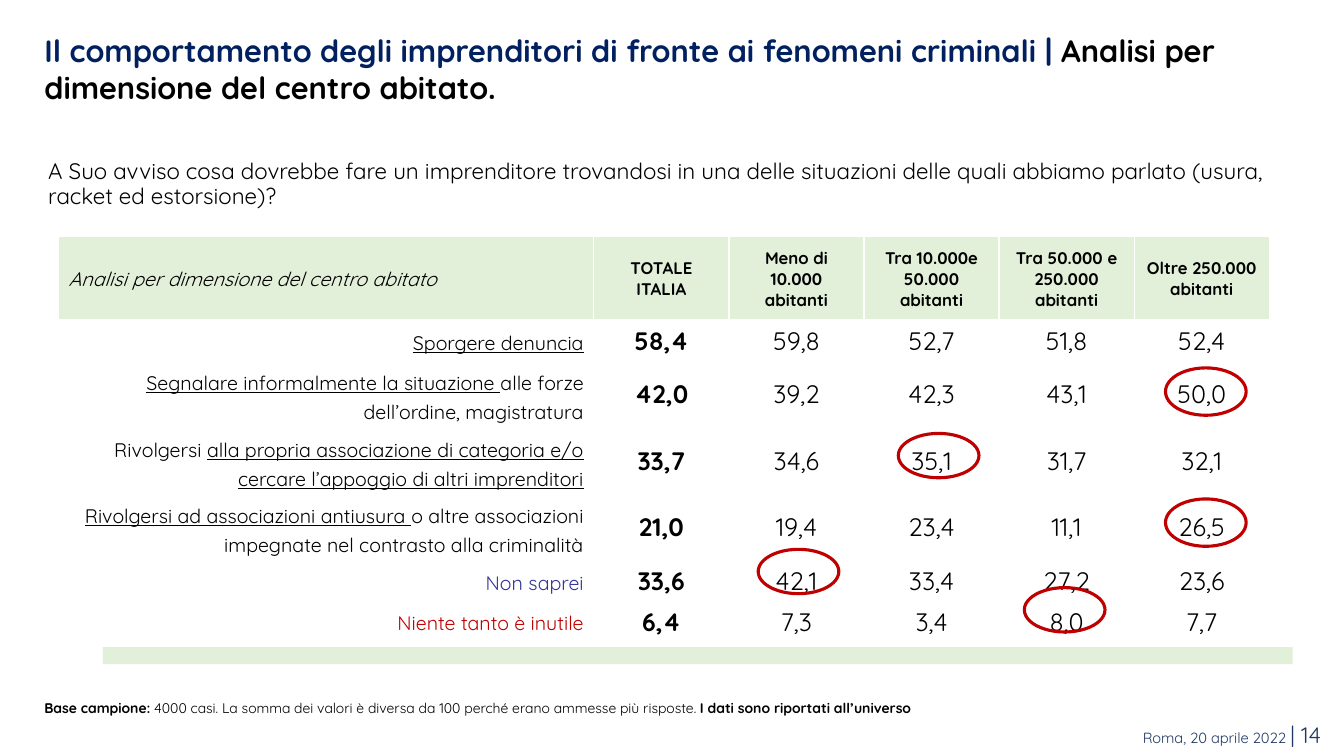
from lxml import etree
from pptx import Presentation
from pptx.dml.color import RGBColor
from pptx.enum.shapes import MSO_SHAPE
from pptx.enum.text import MSO_ANCHOR, PP_ALIGN
from pptx.oxml.ns import qn
from pptx.util import Pt

PX = 9144  # 100 px to the inch
LEFT, CENTER, RIGHT = PP_ALIGN.LEFT, PP_ALIGN.CENTER, PP_ALIGN.RIGHT
MIDDLE, TOP = MSO_ANCHOR.MIDDLE, MSO_ANCHOR.TOP
OVAL, RECTANGLE = MSO_SHAPE.OVAL, MSO_SHAPE.RECTANGLE
NAVY, SLATE, BLACK, WHITE = "002060", "203864", "000000", "FFFFFF"
PALE_GREEN, RED, VIOLET = "E2EFD9", "C00000", "333399"


def rgb(value):
    return RGBColor.from_string(value)


def write(frame, runs, size, align=LEFT, color=BLACK, insets=(10, 5, 10, 5), spacing=None):
    """Fill a text frame with one paragraph of (text, font overrides) runs."""
    frame.word_wrap = True
    frame.margin_left, frame.margin_top, frame.margin_right, frame.margin_bottom = (
        inset * PX for inset in insets)
    paragraph = frame.paragraphs[0]
    paragraph.alignment = align
    if spacing:
        paragraph.line_spacing = spacing
    for text, style in runs:
        run = paragraph.add_run()
        run.text = text
        font = run.font
        font.name = "Quicksand"
        font.size = Pt(style.get("size", size))
        font.bold = style.get("bold", False)
        font.italic = style.get("italic", False)
        font.underline = style.get("underline", False)
        font.color.rgb = rgb(style.get("color", color))


prs = Presentation()
prs.slide_width, prs.slide_height = 1333 * PX, 750 * PX
slide = prs.slides.add_slide(prs.slide_layouts[6])
shapes = slide.shapes
BOLD, UNDERLINED = {"bold": True}, {"underline": True}

# Title, question and footers
text_blocks = [
    ((627, 711, 693, 37),
     [("Roma, 20 aprile 2022 ", {}), ("| 14", {"size": 16})],
     {"size": 10.5, "align": RIGHT, "color": SLATE}),
    ((37, 27, 1268, 82),
     [("Il comportamento degli imprenditori di fronte ai fenomeni criminali | ",
       {"bold": True, "color": NAVY}),
      ("Analisi per dimensione del centro abitato.", BOLD)],
     {"size": 22, "insets": (7, 4, 7, 4)}),
    ((36, 689, 921, 27),
     [("Base campione:", BOLD),
      (" 4000 casi. La somma dei valori è diversa da 100 perché erano ammesse più risposte. ", {}),
      ("I dati sono riportati all’universo", BOLD)],
     {"size": 10, "insets": (8, 5, 8, 5)}),
    ((38, 153, 1267, 64),
     [("A Suo avviso cosa dovrebbe fare un imprenditore trovandosi in una delle situazioni "
       "delle quali abbiamo parlato (usura, racket ed estorsione)?", {})],
     {"size": 16, "spacing": 0.93}),
]
for box, runs, layout in text_blocks:
    write(shapes.add_textbox(*(length * PX for length in box)).text_frame, runs, **layout)

# Answers by size of town
towns = ["TOTALE ITALIA", "Meno di 10.000 abitanti", "Tra 10.000e 50.000 abitanti",
         "Tra 50.000 e 250.000 abitanti", "Oltre 250.000 abitanti"]
answers = [
    ([("Sporgere denuncia", UNDERLINED)],
     ["58,4", "59,8", "52,7", "51,8", "52,4"]),
    ([("Segnalare informalmente la situazione ", UNDERLINED),
      ("alle forze dell’ordine, magistratura", {})],
     ["42,0", "39,2", "42,3", "43,1", "50,0"]),
    ([("Rivolgersi ", {}),
      ("alla propria associazione di categoria e/o cercare l’appoggio di altri imprenditori",
       UNDERLINED)],
     ["33,7", "34,6", "35,1", "31,7", "32,1"]),
    ([("Rivolgersi ad associazioni antiusura ", UNDERLINED),
      ("o altre associazioni impegnate nel contrasto alla criminalità", {})],
     ["21,0", "19,4", "23,4", "11,1", "26,5"]),
    ([("Non saprei", {"color": VIOLET})],
     ["33,6", "42,1", "33,4", "27,2", "23,6"]),
    ([("Niente tanto è inutile", {"color": RED})],
     ["6,4", "7,3", "3,4", "8,0", "7,7"]),
]
table = shapes.add_table(len(answers) + 1, len(towns) + 1,
                         58 * PX, 235 * PX, 1200 * PX, 317 * PX).table
table.first_row = table.horz_banding = False
for index, column in enumerate(table.columns):
    column.width = (134 if index else 531) * PX
for index, row in enumerate(table.rows):
    row.height = (39 if index else 83) * PX

write(table.cell(0, 0).text_frame,
      [("Analisi per dimensione del centro abitato", {"italic": True})], 14)
for column, town in enumerate(towns, 1):
    write(table.cell(0, column).text_frame, [(town, BOLD)], 12, CENTER)
for row, (answer, shares) in enumerate(answers, 1):
    write(table.cell(row, 0).text_frame, answer, 14, RIGHT, spacing=1.2)
    for column, share in enumerate(shares, 1):
        write(table.cell(row, column).text_frame, [(share, {"bold": column == 1})],
              18, CENTER, insets=(1, 1, 1, 0))

for row in range(len(answers) + 1):
    for column in range(len(towns) + 1):
        cell = table.cell(row, column)
        cell.vertical_anchor = TOP if row and not column else MIDDLE
        properties = cell._tc.get_or_add_tcPr()
        for side in ("lnL", "lnR", "lnT", "lnB"):
            thick = (row, side) in ((0, "lnB"), (1, "lnT"))
            border = etree.SubElement(properties, qn(f"a:{side}"), w=str(Pt(3 if thick else 1)))
            solid = etree.SubElement(border, qn("a:solidFill"))
            etree.SubElement(solid, qn("a:srgbClr"), val=WHITE)
        cell.fill.solid()
        cell.fill.fore_color.rgb = rgb(WHITE if row else PALE_GREEN)

# Rings around the shares that stand out
for left, top, height in [(1016, 583, 44), (1156, 365, 47), (891, 430, 44),
                          (1156, 495, 47), (752, 545, 44)]:
    ring = shapes.add_shape(OVAL, left * PX, top * PX, 80 * PX, height * PX)
    ring.shadow.inherit = False
    ring.fill.background()
    ring.line.color.rgb = rgb(RED)
    ring.line.width = Pt(2.25)

closing_bar = shapes.add_shape(RECTANGLE, 102 * PX, 642 * PX, 1180 * PX, 17 * PX)
closing_bar.shadow.inherit = False
closing_bar.fill.solid()
closing_bar.fill.fore_color.rgb = rgb(PALE_GREEN)
closing_bar.line.fill.background()

prs.save("out.pptx")
